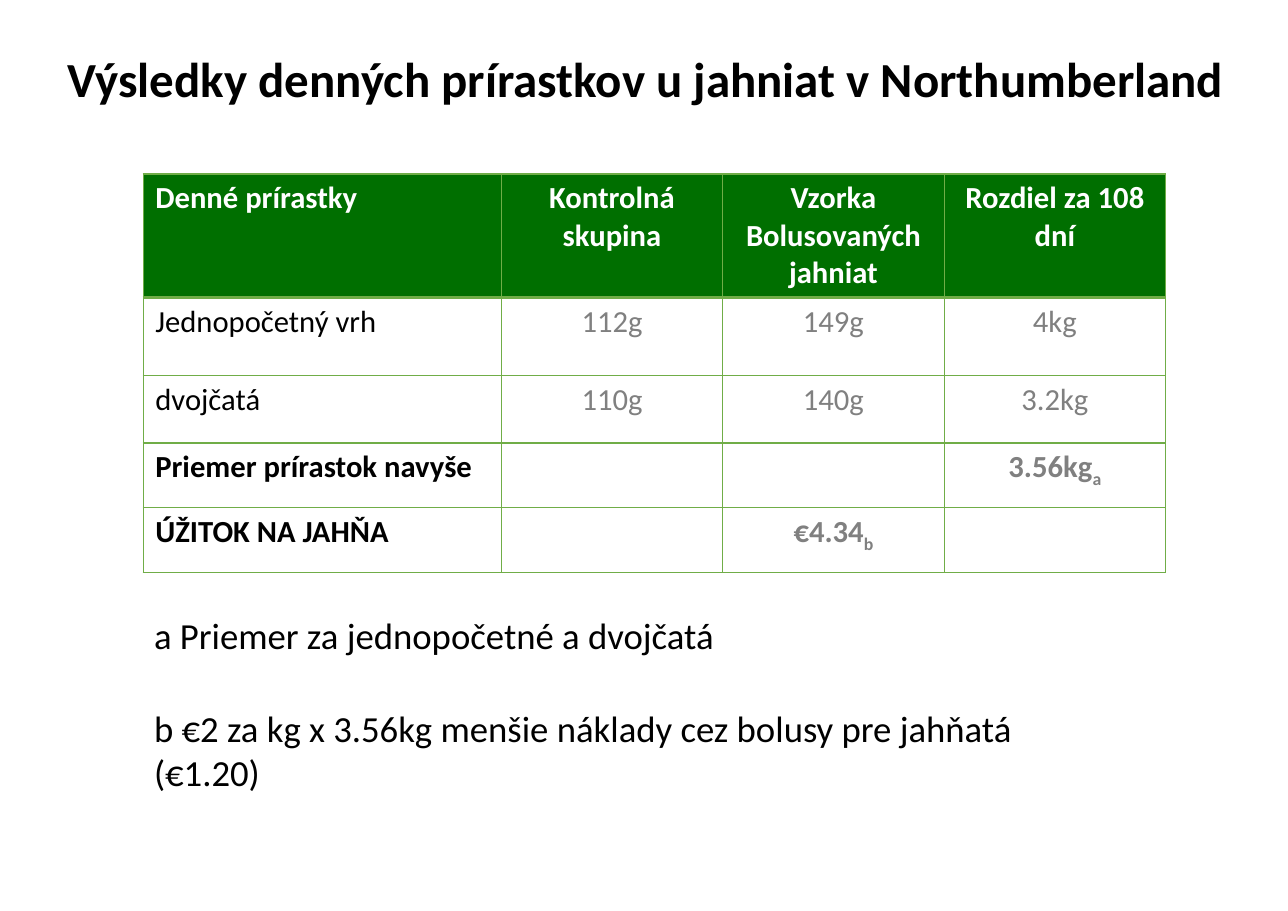
from dataclasses import dataclass

from lxml.etree import SubElement
from pptx import Presentation
from pptx.dml.color import RGBColor
from pptx.enum.text import MSO_ANCHOR, MSO_AUTO_SIZE, PP_ALIGN
from pptx.oxml.ns import qn
from pptx.util import Inches, Pt

FONT = "Calibri"
COLORS = {
    "black": "000000",
    "white": "FFFFFF",
    "header": "006F00",
    "border": "70AD47",
    "value": "808080",
}
COLUMN_WIDTHS = [3.25, 2.01, 2.01, 2.01]


@dataclass
class Row:
    height: float
    cells: list[str]  # a line break starts a new paragraph
    bold: bool = False
    header: bool = False
    subscript: str = ""  # follows the last filled cell


ROWS = [
    Row(1.1, ["Denné prírastky", "Kontrolná skupina",
              "Vzorka\nBolusovaných jahniat", "Rozdiel za 108 dní"],
        bold=True, header=True),
    Row(0.71, ["Jednopočetný vrh", "112g", "149g", "4kg"]),
    Row(0.61, ["dvojčatá", "110g", "140g", "3.2kg"]),
    Row(0.59, ["Priemer prírastok navyše", "", "", "3.56kg"], bold=True, subscript="a"),
    Row(0.59, ["ÚŽITOK NA JAHŇA", "", "€4.34", ""], bold=True, subscript="b"),
]
NOTES = [
    "a Priemer za jednopočetné a dvojčatá",
    "b €2 za kg x 3.56kg menšie náklady cez bolusy pre jahňatá (€1.20)",
]


def add_run(paragraph, text: str, size: float, color: str, bold: bool = False,
            subscript: bool = False) -> None:
    run = paragraph.add_run()
    run.text = text
    run.font.name = FONT
    run.font.size = Pt(size)
    run.font.bold = bold
    run.font.color.rgb = RGBColor.from_string(COLORS[color])
    if subscript:
        run._r.get_or_add_rPr().set("baseline", "-25000")


def add_borders(cell, header: bool, below_header: bool) -> None:
    properties = cell._tc.get_or_add_tcPr()
    widths = {"L": 1, "R": 1, "T": 2 if below_header else 1, "B": 2 if header else 1}
    for side, width in widths.items():
        line = SubElement(properties, qn(f"a:ln{side}"), w=str(Pt(width)))
        fill = SubElement(line, qn("a:solidFill"))
        SubElement(fill, qn("a:srgbClr"), val=COLORS["border"])


def fill_cell(cell, row: Row, row_index: int, column: int) -> None:
    add_borders(cell, row.header, row_index == 1)
    cell.fill.solid()
    cell.fill.fore_color.rgb = RGBColor.from_string(
        COLORS["header" if row.header else "white"])
    cell.margin_left = cell.margin_right = Inches(0.11)
    cell.margin_top = cell.margin_bottom = Inches(0.05)
    text = row.cells[column]
    if not text:
        return
    color = "white" if row.header else "value" if column else "black"
    for index, line in enumerate(text.split("\n")):
        frame = cell.text_frame
        paragraph = frame.add_paragraph() if index else frame.paragraphs[0]
        paragraph.alignment = PP_ALIGN.CENTER if column else PP_ALIGN.LEFT
        add_run(paragraph, line, 20, color, row.bold)
    if row.subscript and column:
        add_run(paragraph, row.subscript, 20, color, row.bold, subscript=True)


def add_title(slide) -> None:
    title = slide.shapes.title
    title.left, title.top = Inches(0.51), Inches(0.39)
    title.width, title.height = Inches(10.79), Inches(0.64)
    frame = title.text_frame
    frame.word_wrap = False
    frame.auto_size = MSO_AUTO_SIZE.NONE
    frame.vertical_anchor = MSO_ANCHOR.TOP
    paragraph = frame.paragraphs[0]
    paragraph.alignment = PP_ALIGN.LEFT
    add_run(paragraph, "Výsledky denných prírastkov u jahniat v Northumberland",
            32, "black", bold=True)


def add_results_table(slide) -> None:
    frame = slide.shapes.add_table(
        len(ROWS), len(COLUMN_WIDTHS), Inches(1.3), Inches(1.58),
        Inches(sum(COLUMN_WIDTHS)), Inches(sum(row.height for row in ROWS)))
    table = frame.table
    table.horz_banding = False
    for column, width in zip(table.columns, COLUMN_WIDTHS):
        column.width = Inches(width)
    for row_index, row in enumerate(ROWS):
        table.rows[row_index].height = Inches(row.height)
        for column in range(len(COLUMN_WIDTHS)):
            fill_cell(table.cell(row_index, column), row, row_index, column)


def add_notes_below(slide) -> None:
    box = slide.shapes.add_textbox(Inches(1.3), Inches(5.51), Inches(8.76), Inches(1.58))
    frame = box.text_frame
    frame.word_wrap = True
    for index, note in enumerate(NOTES):
        paragraph = frame.add_paragraph() if index else frame.paragraphs[0]
        if index:
            paragraph.space_before = Pt(32)
        add_run(paragraph, note, 24, "black")


def main() -> None:
    presentation = Presentation()
    presentation.slide_width = Inches(11.69)
    presentation.slide_height = Inches(8.27)
    slide = presentation.slides.add_slide(presentation.slide_layouts[5])

    # Heading
    add_title(slide)
    # Daily gains
    add_results_table(slide)
    # Explanations of a and b
    add_notes_below(slide)

    presentation.save("out.pptx")


if __name__ == "__main__":
    main()
